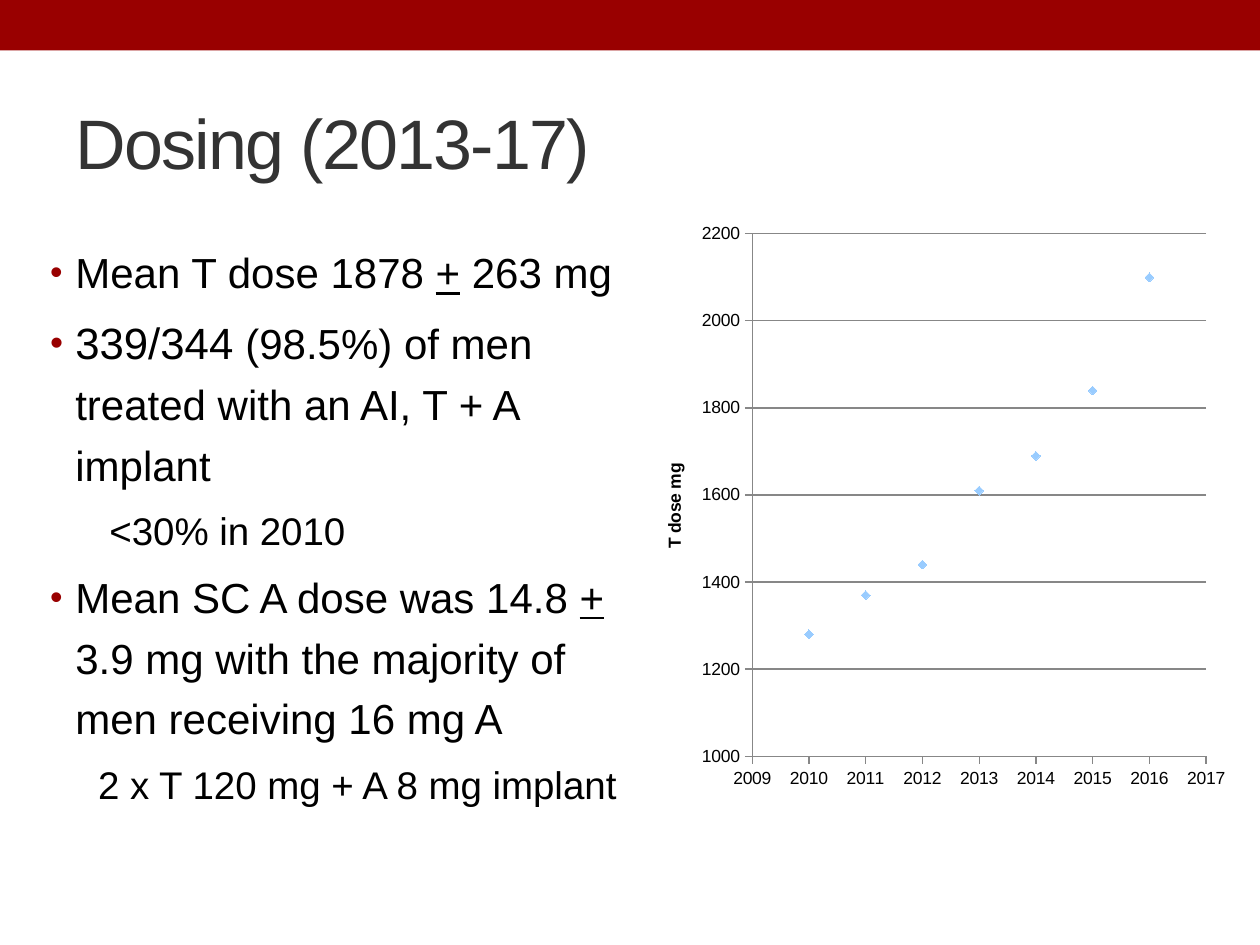
from dataclasses import dataclass

from lxml.etree import SubElement
from pptx import Presentation
from pptx.chart.data import XyChartData
from pptx.dml.color import RGBColor
from pptx.enum.chart import XL_CHART_TYPE, XL_MARKER_STYLE, XL_TICK_MARK
from pptx.enum.shapes import MSO_SHAPE
from pptx.enum.text import MSO_ANCHOR, PP_ALIGN
from pptx.oxml import parse_xml
from pptx.oxml.ns import nsdecls, qn
from pptx.util import Inches, Pt


@dataclass(frozen=True)
class Theme:
    """Colours, font and type sizes of the slide."""
    font: str = "Arial"
    accent: RGBColor = RGBColor(0x99, 0x00, 0x00)
    heading: RGBColor = RGBColor(0x33, 0x33, 0x33)
    text: RGBColor = RGBColor(0x00, 0x00, 0x00)
    marker: RGBColor = RGBColor(0x99, 0xCC, 0xFF)
    grid: RGBColor = RGBColor(0x87, 0x87, 0x87)
    title_size: int = 40
    body_size: float = 24
    lead_size: float = 25
    sub_size: float = 22
    chart_size: int = 10


THEME = Theme()
DOSES = {2010: 1280, 2011: 1370, 2012: 1440, 2013: 1610,
         2014: 1690, 2015: 1840, 2016: 2100}
BULLETS = [
    (0, [("Mean T dose 1878 ", {}), ("+", {"underline": True}), (" 263 mg", {})]),
    (0, [("339/344 ", {"size": THEME.lead_size}),
         ("(98.5%) of men treated with an AI, T + A implant", {})]),
    (0.47, [("<30% in 2010", {"size": THEME.sub_size})]),
    (0, [("Mean SC A dose was 14.8 ", {}), ("+", {"underline": True}),
         (" 3.9 mg with the majority of men receiving 16 mg A", {})]),
    (0.38, [("2 x T 120 mg + A 8 mg implant", {"size": THEME.sub_size})]),
]


def add_text(p, text, size=THEME.body_size, color=THEME.text, bold=False,
             underline=None, spacing=None):
    """Add a formatted run to a paragraph."""
    r = p.add_run()
    r.text = text
    r.font.name = THEME.font
    r.font.size = Pt(size)
    r.font.color.rgb = color
    r.font.bold = bold
    r.font.underline = underline
    if spacing is not None:
        r.font._element.set("spc", str(spacing * 100))


def set_bullet(p):
    """Give a paragraph a hanging accent bullet."""
    pPr = p._p.get_or_add_pPr()
    pPr.set("marL", str(Inches(0.2)))
    pPr.set("indent", str(Inches(-0.2)))
    color = SubElement(pPr, qn("a:buClr"))
    SubElement(color, qn("a:srgbClr"), val=str(THEME.accent))
    SubElement(pPr, qn("a:buSzPct"), val="85000")
    SubElement(pPr, qn("a:buFont"), typeface=THEME.font)
    SubElement(pPr, qn("a:buChar"), char="•")


def add_band(slide, left, top, width, height):
    """Draw the solid band along the top of the slide."""
    sp = slide.shapes.add_shape(MSO_SHAPE.RECTANGLE, left, top, width, height)
    sp.shadow.inherit = False
    sp.fill.solid()
    sp.fill.fore_color.rgb = THEME.accent
    sp.line.fill.background()


def add_title(slide, left, top, width, height):
    """Place and format the title placeholder."""
    sp = slide.shapes.title
    sp.left, sp.top, sp.width, sp.height = left, top, width, height
    tf = sp.text_frame
    tf.vertical_anchor = MSO_ANCHOR.MIDDLE
    p = tf.paragraphs[0]
    p.alignment = PP_ALIGN.LEFT
    add_text(p, "Dosing (2013-17)", size=THEME.title_size,
             color=THEME.heading, spacing=-1)


def add_bullets(slide, left, top, width, height):
    """Write the dosing points with their indented details."""
    tf = slide.shapes.add_textbox(left, top, width, height).text_frame
    tf.word_wrap = True
    for i, (indent, runs) in enumerate(BULLETS):
        p = tf.add_paragraph() if i else tf.paragraphs[0]
        p.line_spacing = 1.2
        p.space_before = Pt(4.8)
        if indent:
            p._p.get_or_add_pPr().set("marL", str(Inches(indent)))
        else:
            set_bullet(p)
        for text, style in runs:
            add_text(p, text, **style)


def format_axis(axis, low, high, step):
    """Set the scale, ticks and line of an axis."""
    axis.minimum_scale, axis.maximum_scale, axis.major_unit = low, high, step
    axis.major_tick_mark = XL_TICK_MARK.OUTSIDE
    axis.minor_tick_mark = XL_TICK_MARK.NONE
    axis.format.line.color.rgb = THEME.grid
    axis.format.line.width = Pt(0.75)
    axis.tick_labels.number_format = "General"
    axis.tick_labels.number_format_is_linked = False


def add_dose_chart(slide, left, top, width, height):
    """Plot the dose of each year as a scatter chart."""
    data = XyChartData()
    points = data.add_series("Series 1")
    for year, dose in DOSES.items():
        points.add_data_point(year, dose)
    chart = slide.shapes.add_chart(XL_CHART_TYPE.XY_SCATTER, left, top,
                                   width, height, data).chart
    chart.has_legend = False
    chart.has_title = False
    chart.font.name = THEME.font
    chart.font.size = Pt(THEME.chart_size)
    chart.font.color.rgb = THEME.text
    chart.plots[0].vary_by_categories = False

    s = chart.plots[0].series[0]
    s.format.line.fill.background()
    s.marker.style = XL_MARKER_STYLE.DIAMOND
    s.marker.size = 5
    s.marker.format.fill.solid()
    s.marker.format.fill.fore_color.rgb = THEME.marker
    s.marker.format.line.color.rgb = THEME.marker

    years, doses = chart.category_axis, chart.value_axis
    format_axis(years, 2009, 2017, 1)
    format_axis(doses, 1000, 2200, 200)
    years.has_major_gridlines = False
    doses.has_major_gridlines = True
    doses.major_gridlines.format.line.color.rgb = THEME.grid
    doses.major_gridlines.format.line.width = Pt(0.75)
    add_text(doses.axis_title.text_frame.paragraphs[0], "T dose mg",
             size=THEME.chart_size, bold=True)
    set_plot_box(chart, x=0.19, y=0.04, w=0.76, h=0.89)


def set_plot_box(chart, **box):
    """Fix the inner plot area as fractions of the chart."""
    modes = "".join(f'<c:{k}Mode val="edge"/>' for k in "xy")
    sizes = "".join(f'<c:{k} val="{v}"/>' for k, v in box.items())
    area = chart._chartSpace.chart.plotArea
    for old in area.findall(qn("c:layout")):
        area.remove(old)
    area.insert(0, parse_xml(
        f'<c:layout {nsdecls("c")}><c:manualLayout>'
        f'<c:layoutTarget val="inner"/>{modes}{sizes}'
        '</c:manualLayout></c:layout>'))


def main():
    """Build and save the slide."""
    prs = Presentation()
    prs.slide_width, prs.slide_height = Inches(10), Inches(7.5)
    slide = prs.slides.add_slide(prs.slide_layouts[5])
    add_band(slide, 0, 0, prs.slide_width, Inches(0.4))
    add_title(slide, Inches(0.5), Inches(0.58), Inches(9), Inches(1.08))
    add_bullets(slide, Inches(0.3), Inches(1.83), Inches(4.77), Inches(5.16))
    add_dose_chart(slide, Inches(5.07), Inches(1.67), Inches(4.74), Inches(4.66))
    prs.save("out.pptx")


if __name__ == "__main__":
    main()
